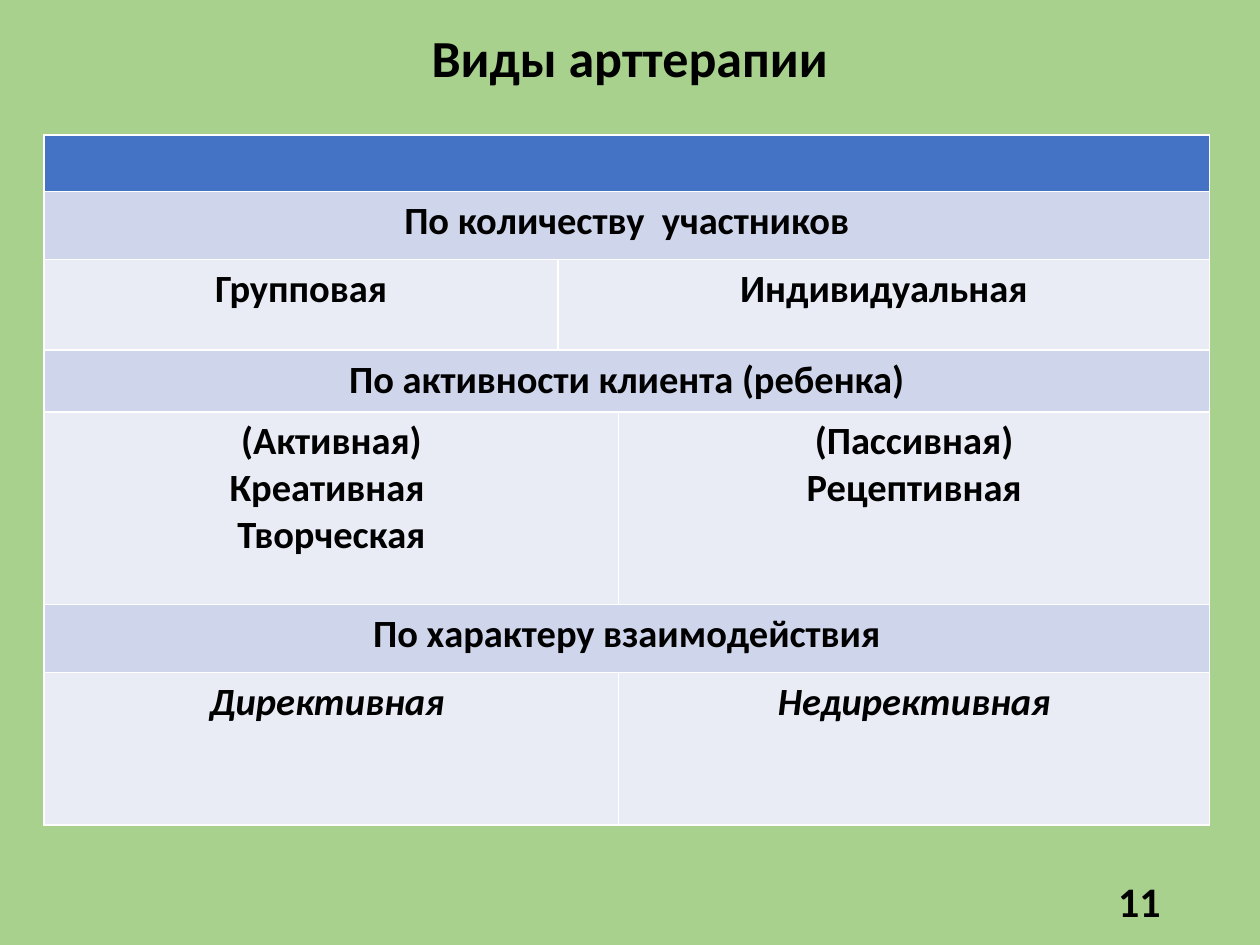
"""Build a slide with a table of the kinds of art therapy."""
import pptx
import pptx.dml.color
import pptx.enum.text
import pptx.oxml
import pptx.oxml.ns
import pptx.util

Inches = pptx.util.Inches
RGB = pptx.dml.color.RGBColor
Align = pptx.enum.text.PP_ALIGN
Anchor = pptx.enum.text.MSO_ANCHOR

GREEN = RGB(0xA9, 0xD1, 0x8E)
BLUE = RGB(0x44, 0x72, 0xC4)
BAND = RGB(0xCF, 0xD5, 0xEA)
PALE = RGB(0xE9, 0xEB, 0xF5)
BLACK = RGB(0, 0, 0)

TITLE = "Виды арттерапии"
NUMBER = "11"
COLS = [4.08, 0.48, 4.69]
ROWS = [
    (0.45, BLUE, False, [(0, 2, "")]),
    (0.54, BAND, False, [(0, 2, "По количеству  участников")]),
    (0.72, PALE, False, [(0, 0, "Групповая"), (1, 2, "Индивидуальная")]),
    (0.49, BAND, False, [(0, 2, "По активности клиента (ребенка)")]),
    (1.53, PALE, False, [(0, 1, "(Активная)\nКреативная \nТворческая"),
                         (2, 2, "(Пассивная)\nРецептивная")]),
    (0.54, BAND, False, [(0, 2, "По характеру взаимодействия")]),
    (1.21, PALE, True, [(0, 1, "Директивная "), (2, 2, "Недирективная")]),
]


def write(frame, text, size=22, align=Align.CENTER, italic=None, space=None):
    frame.text = text
    for para in frame.paragraphs:
        para.alignment = align
        para.line_spacing = space
        for run in para.runs:
            font = run.font
            font.name, font.size = "Calibri", pptx.util.Pt(size)
            font.bold, font.italic = True, italic
            font.color.rgb = BLACK


def place(shape, left, top, width, height):
    shape.left, shape.top = Inches(left), Inches(top)
    shape.width, shape.height = Inches(width), Inches(height)


def edge(cell):
    props = cell._tc.get_or_add_tcPr()
    for spot, side in enumerate(("lnL", "lnR", "lnT", "lnB")):
        props.insert(spot, pptx.oxml.parse_xml(
            f'<a:{side} {pptx.oxml.ns.nsdecls("a")} w="12700"><a:solidFill>'
            f'<a:srgbClr val="FFFFFF"/></a:solidFill></a:{side}>'))


def main():
    deck = pptx.Presentation()
    deck.slide_width, deck.slide_height = Inches(10), Inches(7.5)
    slide = deck.slides.add_slide(deck.slide_layouts[5])
    slide.background.fill.solid()
    slide.background.fill.fore_color.rgb = GREEN

    title = slide.shapes.title
    place(title, 0.75, 0.21, 8.5, 0.55)
    write(title.text_frame, TITLE, size=29.7, space=0.9)
    title.text_frame.vertical_anchor = Anchor.MIDDLE

    box = slide.shapes.add_textbox(
        Inches(7.06), Inches(6.95), Inches(2.25), Inches(0.4))
    box.text_frame.word_wrap = True
    box.text_frame.vertical_anchor = Anchor.MIDDLE
    write(box.text_frame, NUMBER, size=24, align=Align.RIGHT)

    grid = slide.shapes.add_table(
        len(ROWS), len(COLS), Inches(0.35), Inches(1.07),
        Inches(sum(COLS)), Inches(sum(row[0] for row in ROWS))).table
    for col, width in zip(grid.columns, COLS):
        col.width = Inches(width)
    for r, (height, tint, italic, parts) in enumerate(ROWS):
        grid.rows[r].height = Inches(height)
        for c in range(len(COLS)):
            cell = grid.cell(r, c)
            cell.fill.solid()
            cell.fill.fore_color.rgb = tint
            edge(cell)
        for first, last, text in parts:
            cell = grid.cell(r, first)
            if last > first:
                cell.merge(grid.cell(r, last))
            if text:
                write(cell.text_frame, text, italic=italic)

    deck.save("out.pptx")


if __name__ == "__main__":
    main()
